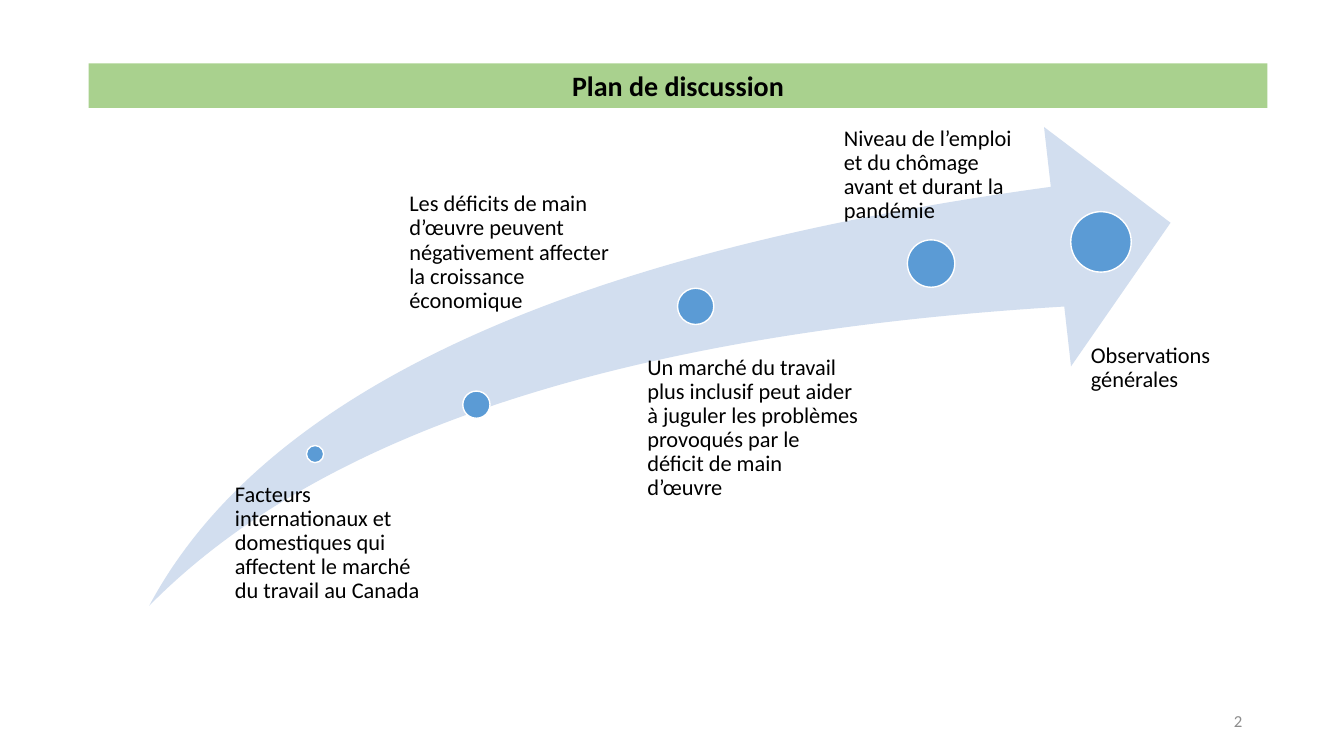
from typing import NamedTuple

from pptx import Presentation
from pptx.dml.color import RGBColor
from pptx.enum.shapes import MSO_SHAPE
from pptx.enum.text import MSO_ANCHOR, PP_ALIGN
from pptx.util import Inches, Pt

RECTANGLE = MSO_SHAPE.RECTANGLE
OVAL = MSO_SHAPE.OVAL
SWOOSH = MSO_SHAPE.SWOOSH_ARROW
TOP, MIDDLE = MSO_ANCHOR.TOP, MSO_ANCHOR.MIDDLE
LEFT, CENTER, RIGHT = PP_ALIGN.LEFT, PP_ALIGN.CENTER, PP_ALIGN.RIGHT

BLACK = RGBColor(0x00, 0x00, 0x00)
WHITE = RGBColor(0xFF, 0xFF, 0xFF)
GRAY = RGBColor(0x8C, 0x8C, 0x8C)
GREEN = RGBColor(0xA9, 0xD1, 0x8E)
PALE_BLUE = RGBColor(0xD2, 0xDE, 0xEF)
BLUE = RGBColor(0x5B, 0x9B, 0xD5)
FONT = "Calibri"


class Area(NamedTuple):
    left: float
    top: float
    width: float
    height: float


class Milestone(NamedTuple):
    dot_left: float
    dot_top: float
    diameter: float
    label: Area
    inset: float
    text: str


MILESTONES = [
    Milestone(3.04, 4.42, 0.17, Area(2.24, 4.79, 2.06, 1.13), 0.09,
              "Facteurs internationaux et domestiques qui affectent le marché du travail au Canada"),
    Milestone(4.59, 3.88, 0.27, Area(3.91, 1.91, 2.17, 1.4), 0.15,
              "Les déficits de main d’œuvre peuvent négativement affecter la croissance économique"),
    Milestone(6.72, 2.86, 0.36, Area(6.23, 3.53, 2.29, 1.64), 0.19,
              "Un marché du travail plus inclusif peut aider à juguler les problèmes "
              "provoqués par le déficit de main d’œuvre"),
    Milestone(9, 2.38, 0.47, Area(8.12, 1.26, 2.11, 1.19), 0.25,
              "Niveau de l’emploi et du chômage avant et durant la pandémie"),
    Milestone(10.62, 2.1, 0.6, Area(10.5, 3.41, 1.83, 0.91), 0.32,
              "Observations générales"),
]


def add_figure(shapes, kind: MSO_SHAPE, area: Area, fill: RGBColor, outlined: bool = False):
    """Add a filled shape, with a thin white outline if asked."""
    figure = shapes.add_shape(kind, *map(Inches, area))
    figure.shadow.inherit = False
    figure.fill.solid()
    figure.fill.fore_color.rgb = fill
    if outlined:
        figure.line.color.rgb = WHITE
        figure.line.width = Pt(1)
    else:
        figure.line.fill.background()
    return figure


def write(box, text: str, size: int, color: RGBColor, align: PP_ALIGN,
          anchor: MSO_ANCHOR, bold: bool = False):
    """Write one styled paragraph into a shape and return it."""
    frame = box.text_frame
    frame.word_wrap = True
    frame.vertical_anchor = anchor
    para = frame.paragraphs[0]
    para.alignment = align
    span = para.add_run()
    span.text = text
    span.font.name = FONT
    span.font.size = Pt(size)
    span.font.bold = bold
    span.font.color.rgb = color
    return para


def add_milestone(shapes, milestone: Milestone) -> None:
    """Add the dot of a milestone and its label."""
    dot = Area(milestone.dot_left, milestone.dot_top, milestone.diameter, milestone.diameter)
    add_figure(shapes, OVAL, dot, BLUE, outlined=True)
    box = shapes.add_textbox(*map(Inches, milestone.label))
    frame = box.text_frame
    frame.margin_left = Inches(milestone.inset)
    frame.margin_top = frame.margin_right = frame.margin_bottom = 0
    para = write(box, milestone.text, 16, BLACK, LEFT, TOP)
    para.line_spacing = 0.9


def main() -> None:
    """Build the discussion plan slide."""
    deck = Presentation()
    deck.slide_width, deck.slide_height = Inches(13.33), Inches(7.5)
    page = deck.slides.add_slide(deck.slide_layouts[6])

    number = page.shapes.add_textbox(*map(Inches, Area(9.42, 6.95, 3, 0.4)))
    write(number, "2", 12, GRAY, RIGHT, MIDDLE)
    title = add_figure(page.shapes, RECTANGLE, Area(0.88, 0.63, 11.69, 0.44), GREEN)
    write(title, "Plan de discussion", 20, BLACK, CENTER, TOP, bold=True)

    timeline = page.shapes.add_group_shape().shapes
    arrow = add_figure(timeline, SWOOSH, Area(1.48, 1.26, 10.13, 4.75), PALE_BLUE)
    arrow.adjustments[0] = arrow.adjustments[1] = 0.25
    for milestone in MILESTONES:
        add_milestone(timeline, milestone)

    deck.save("out.pptx")


if __name__ == "__main__":
    main()
